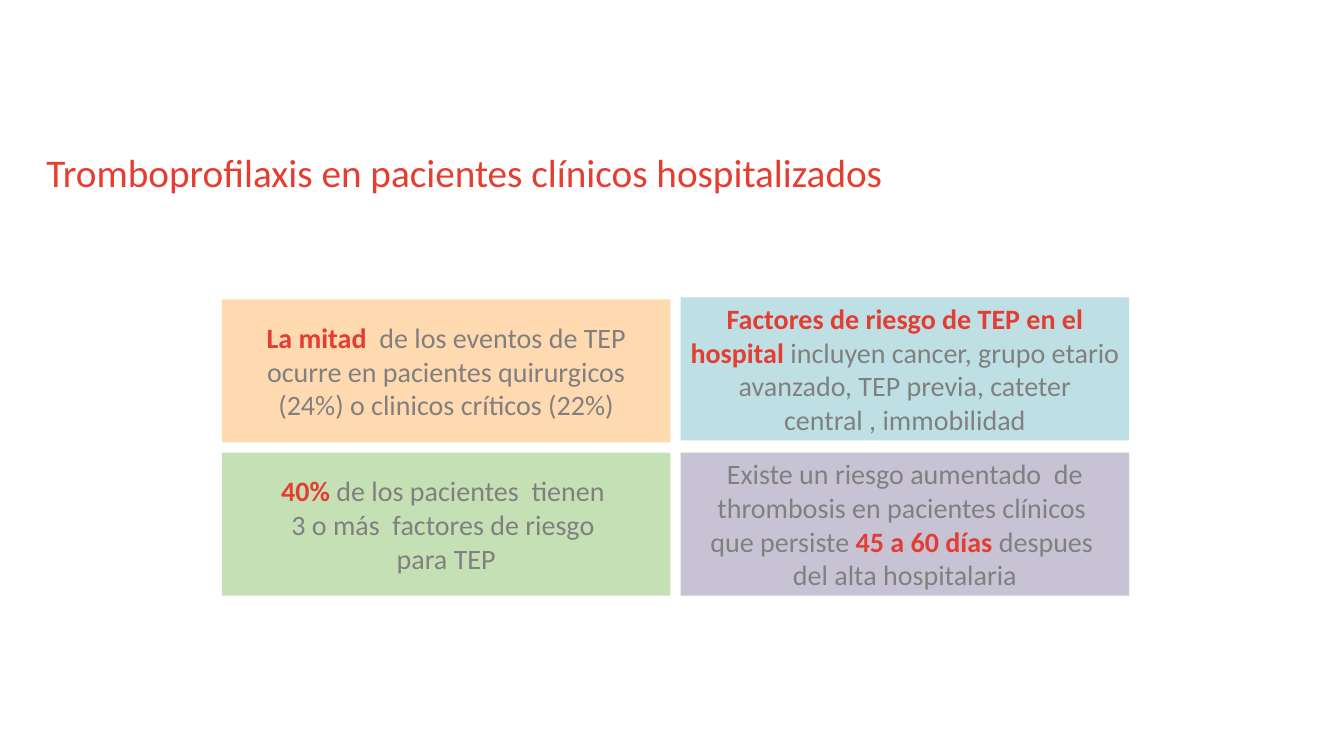
from pptx import Presentation
from pptx.dml.color import RGBColor
from pptx.enum.shapes import MSO_SHAPE as Shape
from pptx.enum.text import MSO_ANCHOR as Anchor, PP_ALIGN as Align
from pptx.util import Inches, Pt

# Content: each run is (text, emphasised)
TITLE = "Tromboprofilaxis en pacientes clínicos hospitalizados"
TITLE_RED, KEY_RED, GREY = "E53E31", "E43D33", "808080"

# (column, row, upward shift in inches, fill, runs)
CARDS = [
    (0, 0, 0, "FFD9B0", [
        ("La mitad  ", True),
        ("de los eventos de TEP ocurre en pacientes quirurgicos "
         "(24%) o clinicos críticos (22%)", False)]),
    (0, 1, 0, "C5E0B4", [
        ("40% ", True),
        ("de los pacientes  tienen \n3 o más  factores de riesgo \npara TEP", False)]),
    (1, 1, 0, "C7C3D5", [
        ("Existe un riesgo aumentado  de thrombosis en pacientes clínicos \n"
         "que persiste ", False),
        ("45 a 60 días ", True),
        ("despues \ndel alta hospitalaria", False)]),
    (1, 0, 0.02, "BEE0E4", [
        ("Factores de riesgo de TEP en el hospital ", True),
        ("incluyen cancer, grupo etario avanzado, TEP previa, "
         "cateter central , immobilidad", False)]),
]

# Grid of cards, in inches
GRID_LEFT, GRID_TOP = 2.2, 2.97
CARD_W, CARD_H, GAP = 4.45, 1.42, 0.1


def rgb(value):
    return RGBColor.from_string(value)


def write(paragraph, text, size=20, color=GREY, bold=False):
    """Add text to a paragraph, turning each newline into a line break."""
    for i, line in enumerate(text.split("\n")):
        if i:
            paragraph.add_line_break()
        run = paragraph.add_run()
        run.text = line
        run.font.name = "Calibri"
        run.font.size = Pt(size)
        run.font.bold = bold
        run.font.color.rgb = rgb(color)


deck = Presentation()
deck.slide_width, deck.slide_height = Inches(13.33), Inches(7.5)
slide = deck.slides.add_slide(deck.slide_layouts[6])

# Title
heading = slide.shapes.add_textbox(
    Inches(0.46), Inches(1.47), Inches(12), Inches(0.46)).text_frame
heading.word_wrap = True
heading.margin_left = heading.margin_right = 0
heading.margin_top = heading.margin_bottom = 0
write(heading.paragraphs[0], TITLE, size=28, color=TITLE_RED)

# Cards
for column, row, shift, fill, runs in CARDS:
    left = GRID_LEFT + column * (CARD_W + GAP)
    top = GRID_TOP + row * (CARD_H + GAP) - shift
    card = slide.shapes.add_shape(
        Shape.RECTANGLE, Inches(left), Inches(top), Inches(CARD_W), Inches(CARD_H))
    card.shadow.inherit = False
    card.fill.solid()
    card.fill.fore_color.rgb = rgb(fill)
    card.line.fill.background()
    card.text_frame.word_wrap = True
    card.text_frame.vertical_anchor = Anchor.MIDDLE
    message = card.text_frame.paragraphs[0]
    message.alignment = Align.CENTER
    for text, key in runs:
        write(message, text, color=KEY_RED if key else GREY, bold=key)

deck.save("out.pptx")
